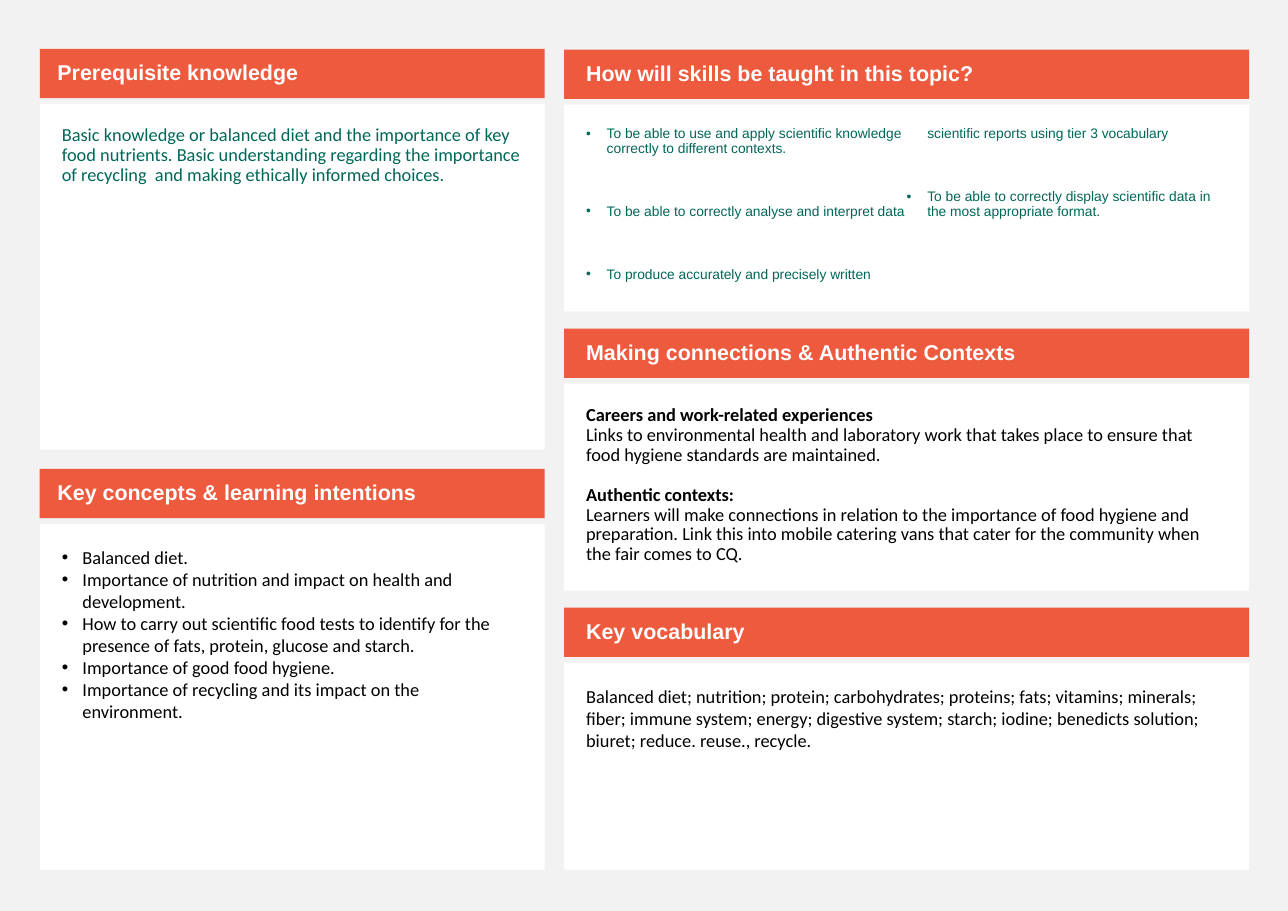
import lxml.etree
import pptx
import pptx.dml.color
import pptx.enum.text
import pptx.oxml.ns
import pptx.util

Pt = pptx.util.Pt
COLORS = {"page": "F2F2F2", "panel": "FFFFFF", "heading": "ED5A3E",
          "heading_text": "FFFFFF", "green": "006758", "black": "000000"}
LEFT_COLUMN = {"left": 26, "width": 330, "top": 31.9, "pitch": 274.6,
               "body_height": 226, "heading_inset": 11.5}
RIGHT_COLUMN = {"left": 368.6, "width": 447.8, "top": 32.4, "pitch": 182.4,
                "body_height": 135.2, "heading_inset": 14.4}
HEADING_HEIGHT = 32.2
BODY_OFFSET = 36
BODY_INSET = 14.4
BULLET_INDENT = 13.5

PREREQUISITES = [
    ("Basic knowledge or balanced diet and the importance of key food nutrients. "
     "Basic understanding regarding the importance of recycling  and making "
     "ethically informed choices.", {"color": "green", "spacing": 0.9}),
]
CONCEPTS = [(concept, {"bullet": True}) for concept in (
    "Balanced diet.",
    "Importance of nutrition and impact on health and development.",
    "How to carry out scientific food tests to identify for the presence of fats, "
    "protein, glucose and starch.",
    "Importance of good food hygiene.",
    "Importance of recycling and its impact on the environment.",
)]
SKILL_FORMAT = {"size": 9, "font": "Arial", "color": "green", "bullet": True,
                "spacing": 0.9, "before": 31.4}
SKILLS = [(skill, SKILL_FORMAT) for skill in (
    "To be able to use and apply scientific knowledge correctly to different contexts.",
    "To be able to correctly analyse and interpret data",
    "To produce accurately and precisely written scientific reports using tier 3 vocabulary",
    "To be able to correctly display scientific data in the most appropriate format.",
)]
CONNECTIONS = [
    ("Careers and work-related experiences", {"bold": True, "spacing": 0.9}),
    ("Links to environmental health and laboratory work that takes place to ensure "
     "that food hygiene standards are maintained.", {"spacing": 0.9}),
    ("Authentic contexts:", {"bold": True, "spacing": 0.9, "before": 13.2}),
    ("Learners will make connections in relation to the importance of food hygiene "
     "and preparation. Link this into mobile catering vans that cater for the "
     "community when the fair comes to CQ.", {"spacing": 0.9}),
]
VOCABULARY = [
    ("Balanced diet; nutrition; protein; carbohydrates; proteins; fats; vitamins; "
     "minerals; fiber; immune system; energy; digestive system; starch; iodine; "
     "benedicts solution; biuret; reduce. reuse., recycle.", {}),
]


def rgb(name):
    """Return the named colour."""
    return pptx.dml.color.RGBColor.from_string(COLORS[name])


def add_text(frame, text, size=12, font="Calibri", color="black", bold=False,
             bullet=False, spacing=1.0, before=0):
    """Add one formatted paragraph to a text frame."""
    paragraph = frame.add_paragraph() if frame.text else frame.paragraphs[0]
    paragraph.alignment = pptx.enum.text.PP_ALIGN.LEFT
    paragraph.line_spacing = spacing
    paragraph.space_before = Pt(before)
    paragraph.space_after = Pt(0)
    run = paragraph.add_run()
    run.text = text
    run.font.size = Pt(size)
    run.font.name = font
    run.font.bold = bold
    run.font.color.rgb = rgb(color)
    indent = Pt(BULLET_INDENT if bullet else 0)
    properties = paragraph._p.get_or_add_pPr()
    properties.set("marL", str(indent))
    properties.set("indent", str(-indent))
    qn = pptx.oxml.ns.qn
    if bullet:
        lxml.etree.SubElement(properties, qn("a:buFont"), typeface="Arial")
        lxml.etree.SubElement(properties, qn("a:buChar"), char="•")
    else:
        lxml.etree.SubElement(properties, qn("a:buNone"))


def place_block(block, box, fill, insets, anchor):
    """Move a text block into its box and set its fill and margins."""
    block.left, block.top, block.width, block.height = map(Pt, box)
    block.fill.solid()
    block.fill.fore_color.rgb = rgb(fill)
    frame = block.text_frame
    frame.word_wrap = True
    frame.auto_size = pptx.enum.text.MSO_AUTO_SIZE.NONE
    frame.vertical_anchor = anchor
    (frame.margin_left, frame.margin_top,
     frame.margin_right, frame.margin_bottom) = map(Pt, insets)
    return frame


def build_panel(slide, column, row, title, paragraphs, heading=None, body=None,
                text_columns=1):
    """Build a heading bar with its body in one row of a column."""
    left, width = column["left"], column["width"]
    top = column["top"] + row * column["pitch"]
    heading = heading or slide.shapes.add_textbox(0, 0, 0, 0)
    body = body or slide.shapes.add_textbox(0, 0, 0, 0)
    anchors = pptx.enum.text.MSO_ANCHOR
    heading_frame = place_block(
        heading, (left, top, width, HEADING_HEIGHT), "heading",
        (column["heading_inset"], 3.6, 7.2, 3.6), anchors.MIDDLE)
    add_text(heading_frame, title, size=14, font="Arial", color="heading_text",
             bold=True, spacing=0.9)
    body_frame = place_block(
        body, (left, top + BODY_OFFSET, width, column["body_height"]), "panel",
        (BODY_INSET,) * 4, anchors.TOP)
    if text_columns > 1:
        body.element.txBody.bodyPr.set("numCol", str(text_columns))
    for text, text_format in paragraphs:
        add_text(body_frame, text, **text_format)


def main():
    """Build the topic overview slide."""
    deck = pptx.Presentation()
    deck.slide_width, deck.slide_height = Pt(841.68), Pt(595.44)
    slide = deck.slides.add_slide(deck.slide_layouts[4])
    slide.background.fill.solid()
    slide.background.fill.fore_color.rgb = rgb("page")
    title, prerequisites, concepts, skills, connections = slide.placeholders
    build_panel(slide, LEFT_COLUMN, 0, "Prerequisite knowledge", PREREQUISITES,
                heading=title, body=prerequisites)
    build_panel(slide, LEFT_COLUMN, 1, "Key concepts & learning intentions", CONCEPTS,
                body=concepts)
    build_panel(slide, RIGHT_COLUMN, 0, "How will skills be taught in this topic?", SKILLS,
                body=skills, text_columns=2)
    build_panel(slide, RIGHT_COLUMN, 1, "Making connections & Authentic Contexts",
                CONNECTIONS, body=connections)
    build_panel(slide, RIGHT_COLUMN, 2, "Key vocabulary", VOCABULARY)
    deck.save("out.pptx")


if __name__ == "__main__":
    main()
